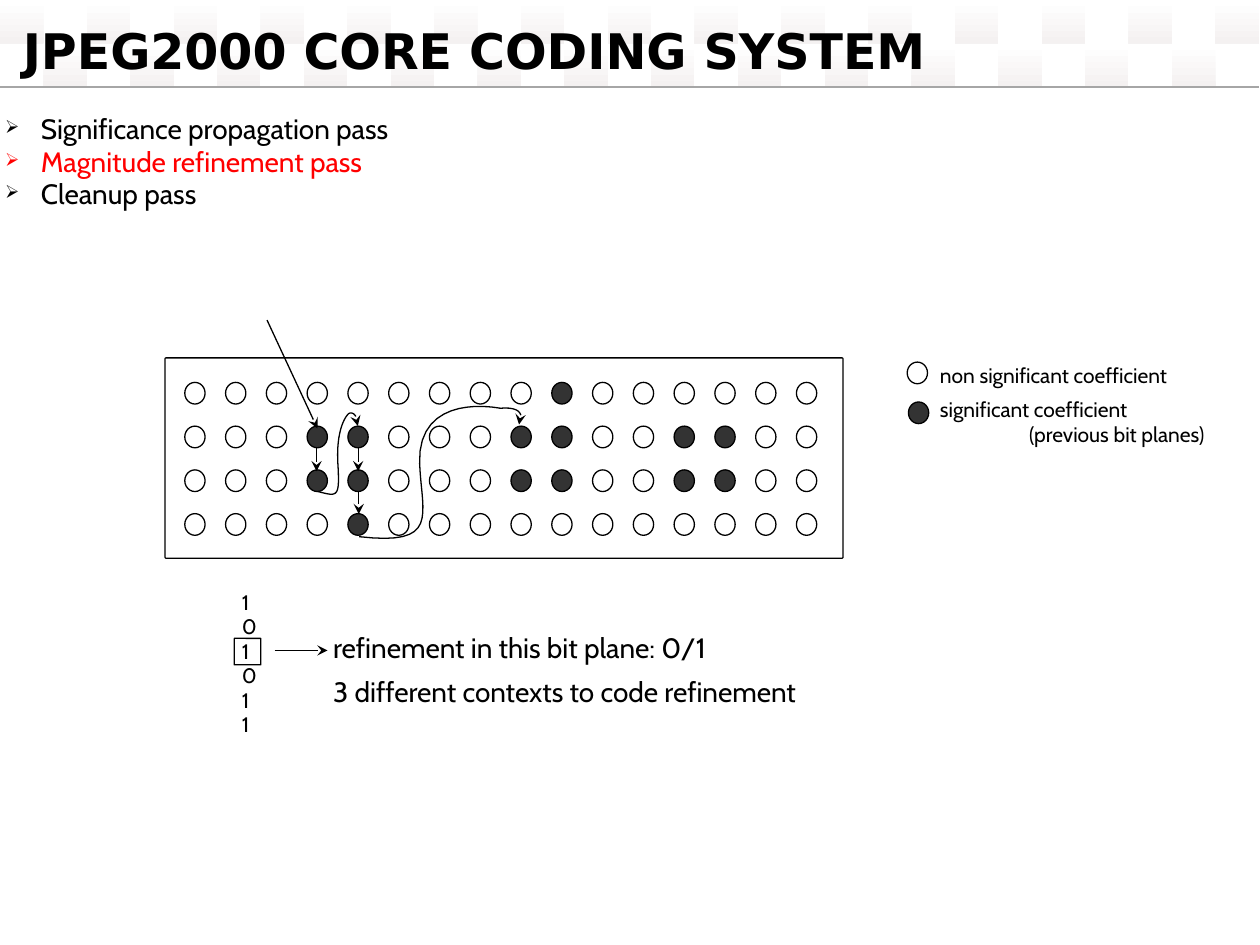
from lxml import etree
from pptx import Presentation
from pptx.dml.color import RGBColor
from pptx.enum.shapes import MSO_CONNECTOR, MSO_SHAPE
from pptx.oxml.ns import qn
from pptx.util import Pt

OVAL, BOX = MSO_SHAPE.OVAL, MSO_SHAPE.ROUNDED_RECTANGLE
STRAIGHT = MSO_CONNECTOR.STRAIGHT
BLACK, WHITE, DARK, RED = "000000", "FFFFFF", "333333", "FF0000"
GREY, TILE_END = "A6A6A6", "F4F1F1"

TITLE = "JPEG2000 CORE CODING SYSTEM"
PASSES = [
    ("Significance propagation pass", BLACK),
    ("Magnitude refinement pass", RED),
    ("Cleanup pass", BLACK),
]
# One character per coefficient: "#" is significant
COEFFICIENTS = [
    ".........#......",
    "...##...##..##..",
    "...##...##..##..",
    "....#...........",
]
LEGEND = [  # dot left, dot top, dot fill, text top, lines with their indents
    (518.4, 206.9, WHITE, 208.1, [("non significant coefficient", 0)]),
    (519.1, 229.7, DARK, 227.7,
     [("significant coefficient", 0), ("(previous bit planes)", 51)]),
]
BITS = "101011"
REMARKS = [
    ("refinement in this bit plane: 0/1", 361.6),
    ("3 different contexts to code refinement", 386.8),
]
SCAN_ARROWS = [  # start x, start y, end x, end y
    (152.6, 182.9, 181.4, 244.8),
    (180.9, 256.3, 180.9, 269.3),
    (204.7, 256.3, 204.7, 269.3),
    (205, 280.8, 205, 293.8),
    (157, 371.7, 187.2, 371.7),
]
SCAN_CURVES = [  # start, Bezier segments (two controls and an end), arrowhead
    ((181.4, 280.8), [((193, 283.7), (194.4, 285.1), (193, 263.5)),
                      ((192.2, 241.9), (199.4, 236.2), (199.4, 236.2))], False),
    ((199.4, 236.2), [((204.5, 234.7), (204.5, 243.4), (204.5, 243.4))], True),
    ((205.2, 306.7), [((251.3, 311.8), (241.2, 295.2), (239.8, 265)),
                      ((238.3, 223.2), (285.8, 233.3), (285.8, 233.3))], False),
    ((285.5, 233.3), [((303.1, 231.8), (296.6, 242.6), (296.6, 242.6))], True),
]
TILE_COUNT, TILE_SIZE, TILE_STEP = 29, 25, 24.8
DOT_SIZE = (11.6, 12.4)
GRID_LEFT, GRID_TOP, GRID_STEP_X, GRID_STEP_Y = 105.6, 218.5, 23.3, 25
CURVE_STEPS = 16

presentation = Presentation()
presentation.slide_width, presentation.slide_height = Pt(720), Pt(540)
slide = presentation.slides.add_slide(presentation.slide_layouts[6])


def color(value):
    return RGBColor.from_string(value)


def set_line(shape, value=BLACK, arrow=False):
    shape.line.color.rgb = color(value)
    shape.line.width = Pt(0.75)
    if arrow:
        line = shape.element.spPr.find(qn("a:ln"))
        etree.SubElement(line, qn("a:tailEnd"), type="stealth")


def add_shape(kind, left, top, width, height, fill=None):
    shape = slide.shapes.add_shape(kind, Pt(left), Pt(top), Pt(width), Pt(height))
    shape.shadow.inherit = False
    if kind == BOX:
        shape.adjustments[0] = 0.005
    if fill:
        shape.fill.solid()
        shape.fill.fore_color.rgb = color(fill)
    else:
        shape.fill.background()
    set_line(shape)
    return shape


def add_tile(left, top):
    tile = add_shape(BOX, left, top, TILE_SIZE, TILE_SIZE)
    tile.line.fill.background()
    tile.fill.gradient()
    tile.fill.gradient_angle = 270
    for stop, value in zip(tile.fill.gradient_stops, (WHITE, TILE_END)):
        stop.color.rgb = color(value)


def add_connector(start_x, start_y, end_x, end_y, value=BLACK, arrow=True):
    connector = slide.shapes.add_connector(
        STRAIGHT, Pt(start_x), Pt(start_y), Pt(end_x), Pt(end_y))
    set_line(connector, value, arrow)
    etree.SubElement(connector.element.spPr, qn("a:effectLst"))


def add_curve(start, segments, arrow):
    """Draw Bezier segments as one open outline of short straight steps."""
    points, begin = [], start
    for segment in segments:
        corners = (begin, *segment)
        for step in range(1, CURVE_STEPS + 1):
            t = step / CURVE_STEPS
            weights = ((1 - t) ** 3, 3 * t * (1 - t) ** 2, 3 * t * t * (1 - t), t ** 3)
            points.append(tuple(
                Pt(sum(weight * corner[axis] for weight, corner in zip(weights, corners)))
                for axis in (0, 1)))
        begin = segment[-1]
    builder = slide.shapes.build_freeform(Pt(start[0]), Pt(start[1]))
    builder.add_line_segments(points, close=False)
    curve = builder.convert_to_shape()
    curve.shadow.inherit = False
    curve.fill.background()
    set_line(curve, arrow=arrow)


def add_text(left, top, width, height, lines, size, font="Cabin", bold=False,
             spacing=0.97, bullet=None):
    """Add a text box; each line is (text, colour, indent)."""
    box = slide.shapes.add_textbox(Pt(left), Pt(top), Pt(width), Pt(height))
    frame = box.text_frame
    margins = dict.fromkeys(
        ("margin_left", "margin_top", "margin_right", "margin_bottom"), 0)
    for name, value in {"word_wrap": True, **margins}.items():
        setattr(frame, name, value)
    for index, (text, value, indent) in enumerate(lines):
        paragraph = frame.add_paragraph() if index else frame.paragraphs[0]
        paragraph.line_spacing = spacing
        properties = paragraph._p.get_or_add_pPr()
        if indent:
            properties.set("marL", str(Pt(indent)))
        if bullet:
            properties.set("indent", str(-Pt(indent)))
            etree.SubElement(properties, qn("a:buSzPct"), val="65000")
            etree.SubElement(properties, qn("a:buChar"), char=bullet)
        run = paragraph.add_run()
        run.text = text
        for name, setting in {"name": font, "size": Pt(size), "bold": bold}.items():
            setattr(run.font, name, setting)
        run.font.color.rgb = color(value)


# Header
for index in range(TILE_COUNT):
    add_tile(index * TILE_STEP, index % 2 * TILE_STEP)
add_connector(0, 49.7, 719.3, 49.7, GREY, arrow=False)
add_text(13, 11.5, 530, 34, [(TITLE, BLACK, 0)], 28, "DejaVu Sans", True, 1.01)

# Coding passes
add_text(2.9, 64.8, 252.7, 56.2, [(text, value, 20.5) for text, value in PASSES],
         16, bullet="➢")

# Coefficient grid
add_shape(BOX, 94.3, 204.5, 387.4, 114.5)
for row, marks in enumerate(COEFFICIENTS):
    for column, mark in enumerate(marks):
        add_shape(OVAL, GRID_LEFT + column * GRID_STEP_X, GRID_TOP + row * GRID_STEP_Y,
                  *DOT_SIZE, DARK if mark == "#" else WHITE)

# Legend
for dot_left, dot_top, fill, text_top, lines in LEGEND:
    add_shape(OVAL, dot_left, dot_top, *DOT_SIZE, fill)
    add_text(537.1, text_top, 174.2, 14 * len(lines),
             [(text, BLACK, indent) for text, indent in lines], 12)

# Scan order
for curve in SCAN_CURVES:
    add_curve(*curve)
for arrow in SCAN_ARROWS:
    add_connector(*arrow)

# Refinement example
add_shape(BOX, 133.9, 364.8, 15.1, 15.1)
add_text(138.2, 337.7, 8, 84.2, [(bit, BLACK, 0) for bit in BITS], 12)
for text, top in REMARKS:
    add_text(190.4, top, 376.6, 18.7, [(text, BLACK, 0)], 16)

presentation.save("out.pptx")
